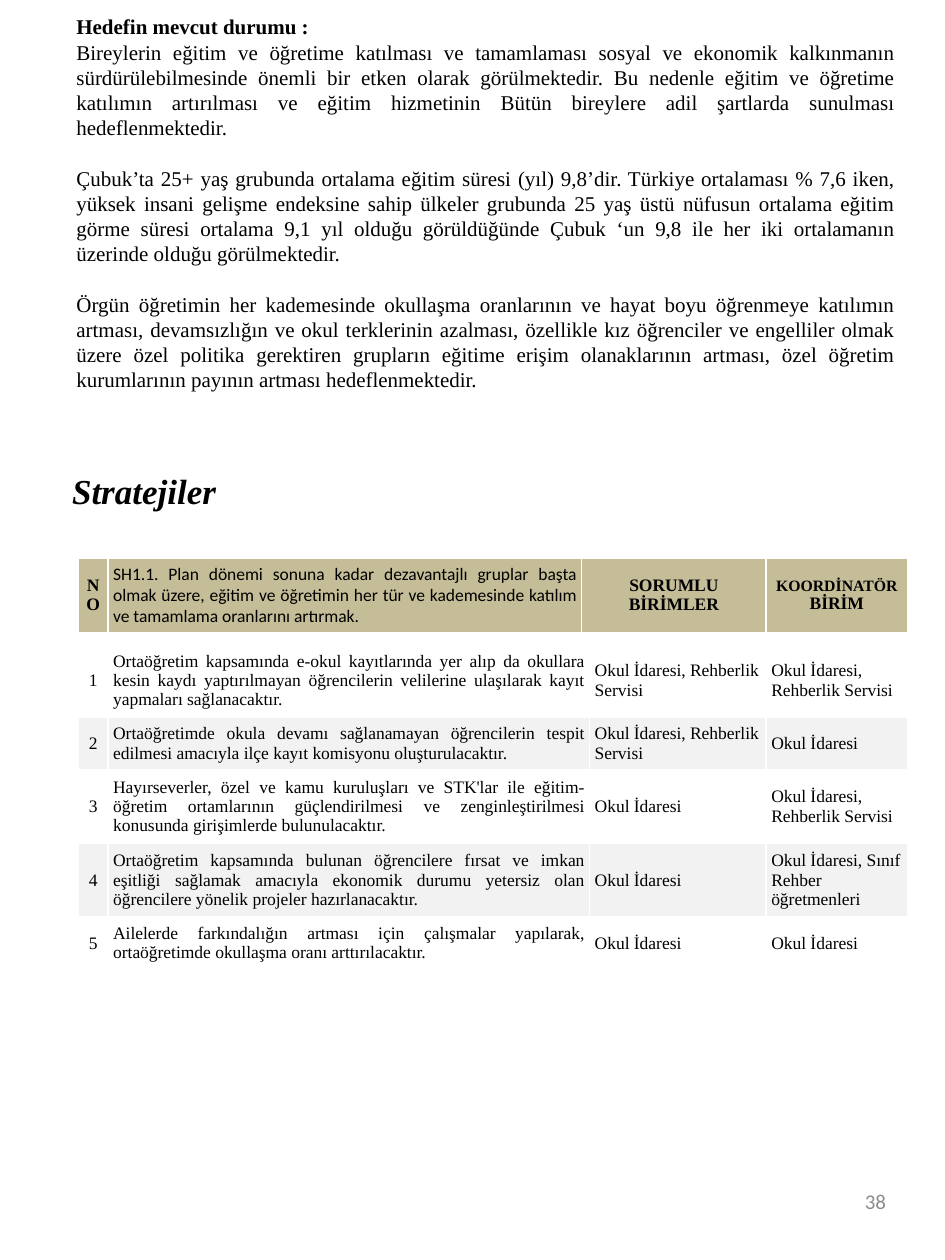
from dataclasses import dataclass

from lxml.etree import SubElement
from pptx import Presentation
from pptx.dml.color import RGBColor
from pptx.enum.text import MSO_ANCHOR, PP_ALIGN
from pptx.oxml.ns import qn
from pptx.slide import Slide
from pptx.table import _Cell as Cell
from pptx.text.text import TextFrame
from pptx.util import Pt

SERIF = "Times New Roman"
SANS = "Calibri"
LEFT, MID, RIGHT, BOTH = PP_ALIGN.LEFT, PP_ALIGN.CENTER, PP_ALIGN.RIGHT, PP_ALIGN.JUSTIFY


@dataclass(frozen=True)
class Style:
    size: float
    align: PP_ALIGN = LEFT
    font: str = SERIF
    bold: bool = False
    slant: bool = False
    ink: str = "000000"


@dataclass(frozen=True)
class Box:
    left: float
    top: float
    width: float
    height: float


@dataclass(frozen=True)
class Item:
    text: str
    style: Style


@dataclass(frozen=True)
class Row:
    height: float
    fill: str
    items: tuple[Item, ...]


def color(code: str) -> RGBColor:
    return RGBColor.from_string(code)


def format_text(frame: TextFrame, style: Style) -> None:
    for para in frame.paragraphs:
        para.alignment = style.align
        for run in para.runs:
            font = run.font
            font.name, font.size = style.font, Pt(style.size)
            font.bold, font.italic = style.bold, style.slant
            font.color.rgb = color(style.ink)


def add_text(slide: Slide, box: Box, text: str, style: Style) -> TextFrame:
    shape = slide.shapes.add_textbox(Pt(box.left), Pt(box.top), Pt(box.width), Pt(box.height))
    frame = shape.text_frame
    frame.word_wrap = True
    frame.text = text
    format_text(frame, style)
    return frame


def add_edges(cell: Cell, code: str, width: float) -> None:
    props = cell._tc.get_or_add_tcPr()
    for place, side in enumerate(("a:lnL", "a:lnR", "a:lnT", "a:lnB")):
        line = SubElement(props, qn(side), w=str(Pt(width)))
        fill = SubElement(line, qn("a:solidFill"))
        SubElement(fill, qn("a:srgbClr"), val=code)
        props.insert(place, line)


def fill_cell(cell: Cell, item: Item, fill: str) -> None:
    cell.text_frame.text = item.text
    format_text(cell.text_frame, item.style)
    cell.vertical_anchor = MSO_ANCHOR.MIDDLE
    cell.margin_left = cell.margin_right = Pt(3)
    cell.margin_top = cell.margin_bottom = Pt(3)
    cell.fill.solid()
    cell.fill.fore_color.rgb = color(fill)
    add_edges(cell, "FFFFFF", 1)


def add_grid(slide: Slide, top: float, widths: tuple[float, ...], rows: list[Row]) -> list[list[Cell]]:
    height = sum(row.height for row in rows)
    frame = slide.shapes.add_table(
        len(rows), len(widths), Pt(44.8), Pt(top), Pt(sum(widths)), Pt(height)
    )
    table = frame.table
    table.first_row = table.horz_banding = False
    for column, width in zip(table.columns, widths):
        column.width = Pt(width)
    cells = []
    for line, row in zip(table.rows, rows):
        line.height = Pt(row.height)
        cells.append(list(line.cells))
        for cell, item in zip(line.cells, row.items):
            fill_cell(cell, item, row.fill)
    return cells


GOAL = (
    "Hedefin mevcut durumu :",
    "Bireylerin eğitim ve öğretime katılması ve tamamlaması sosyal ve ekonomik kalkınmanın sürdürülebilmesinde önemli bir etken olarak görülmektedir. Bu nedenle eğitim ve öğretime katılımın artırılması ve eğitim hizmetinin Bütün bireylere adil şartlarda sunulması hedeflenmektedir.",
    "Çubuk’ta 25+ yaş grubunda ortalama eğitim süresi (yıl) 9,8’dir. Türkiye ortalaması % 7,6 iken, yüksek insani gelişme endeksine sahip ülkeler grubunda 25 yaş üstü nüfusun ortalama eğitim görme süresi ortalama 9,1 yıl olduğu görüldüğünde Çubuk ‘un 9,8 ile her iki ortalamanın üzerinde olduğu görülmektedir.",
    "Örgün öğretimin her kademesinde okullaşma oranlarının ve hayat boyu öğrenmeye katılımın artması, devamsızlığın ve okul terklerinin azalması, özellikle kız öğrenciler ve engelliler olmak üzere özel politika gerektiren grupların eğitime erişim olanaklarının artması, özel öğretim kurumlarının payının artması hedeflenmektedir.",
)
OFFICE = "Okul İdaresi"
GUIDE = "Okul İdaresi, Rehberlik Servisi"
TASKS = (
    (41.6, "Ortaöğretim kapsamında e-okul kayıtlarında yer alıp da okullara kesin kaydı yaptırılmayan öğrencilerin velilerine ulaşılarak kayıt yapmaları sağlanacaktır.", GUIDE, GUIDE),
    (29.8, "Ortaöğretimde okula devamı sağlanamayan öğrencilerin tespit edilmesi amacıyla ilçe kayıt komisyonu oluşturulacaktır.", GUIDE, OFFICE),
    (41.6, "Hayırseverler, özel ve kamu kuruluşları ve STK'lar ile eğitim-öğretim ortamlarının güçlendirilmesi ve zenginleştirilmesi konusunda girişimlerde bulunulacaktır.", OFFICE, GUIDE),
    (41.6, "Ortaöğretim kapsamında bulunan öğrencilere fırsat ve imkan eşitliği sağlamak amacıyla ekonomik durumu yetersiz olan öğrencilere yönelik projeler hazırlanacaktır.", OFFICE, "Okul İdaresi, Sınıf Rehber öğretmenleri"),
    (29.8, "Ailelerde farkındalığın artması için çalışmalar yapılarak, ortaöğretimde okullaşma oranı arttırılacaktır.", OFFICE, OFFICE),
)
HEAD = Style(10, MID, bold=True)
TITLES = (
    Item("NO", HEAD),
    Item("SH1.1. Plan dönemi sonuna kadar dezavantajlı gruplar başta olmak üzere, eğitim ve öğretimin her tür ve kademesinde katılım ve tamamlama oranlarını artırmak.", Style(10, BOTH, SANS)),
    Item("SORUMLU\vBİRİMLER", HEAD),
    Item("KOORDİNATÖR\vBİRİM", HEAD),
)


def main() -> None:
    deck = Presentation()
    deck.slide_width, deck.slide_height = Pt(540), Pt(720)
    slide = deck.slides.add_slide(deck.slide_layouts[6])

    goal = add_text(slide, Box(36.6, 4.4, 482.4, 225.4), "\n".join(GOAL), Style(12, BOTH))
    goal.paragraphs[0].runs[0].font.bold = True
    for para in goal.paragraphs[1:3]:
        para.space_after = Pt(14.4)

    plan = add_text(
        slide, Box(-36.7, 261.4, 168.5, 33.1), "Stratejiler", Style(20, BOTH, bold=True, slant=True)
    )
    plan.word_wrap = False
    title = plan.paragraphs[0]
    title.line_spacing, title.space_after = 1.15, Pt(10)
    title._p.get_or_add_pPr().set("marL", str(Pt(70.8)))

    head = add_grid(slide, 319, (16.9, 270.7, 105.4, 80.8), [Row(42.4, "C4BD97", TITLES)])
    head[0][3].text_frame.paragraphs[0].runs[0].font.size = Pt(9)

    rows = []
    for count, (height, task, unit, lead) in enumerate(TASKS, 1):
        items = (
            Item(str(count), Style(10, MID)),
            Item(task, Style(10, BOTH)),
            Item(unit, Style(10)),
            Item(lead, Style(10)),
        )
        rows.append(Row(height, "FFFFFF" if count % 2 else "F2F2F2", items))
    add_grid(slide, 367.9, (16.9, 275.2, 100.9, 80.8), rows)

    page = add_text(slide, Box(387.4, 667.4, 126, 38.2), "38", Style(12, RIGHT, SANS, ink="8C8C8C"))
    page.vertical_anchor = MSO_ANCHOR.MIDDLE
    deck.save("out.pptx")


if __name__ == "__main__":
    main()
